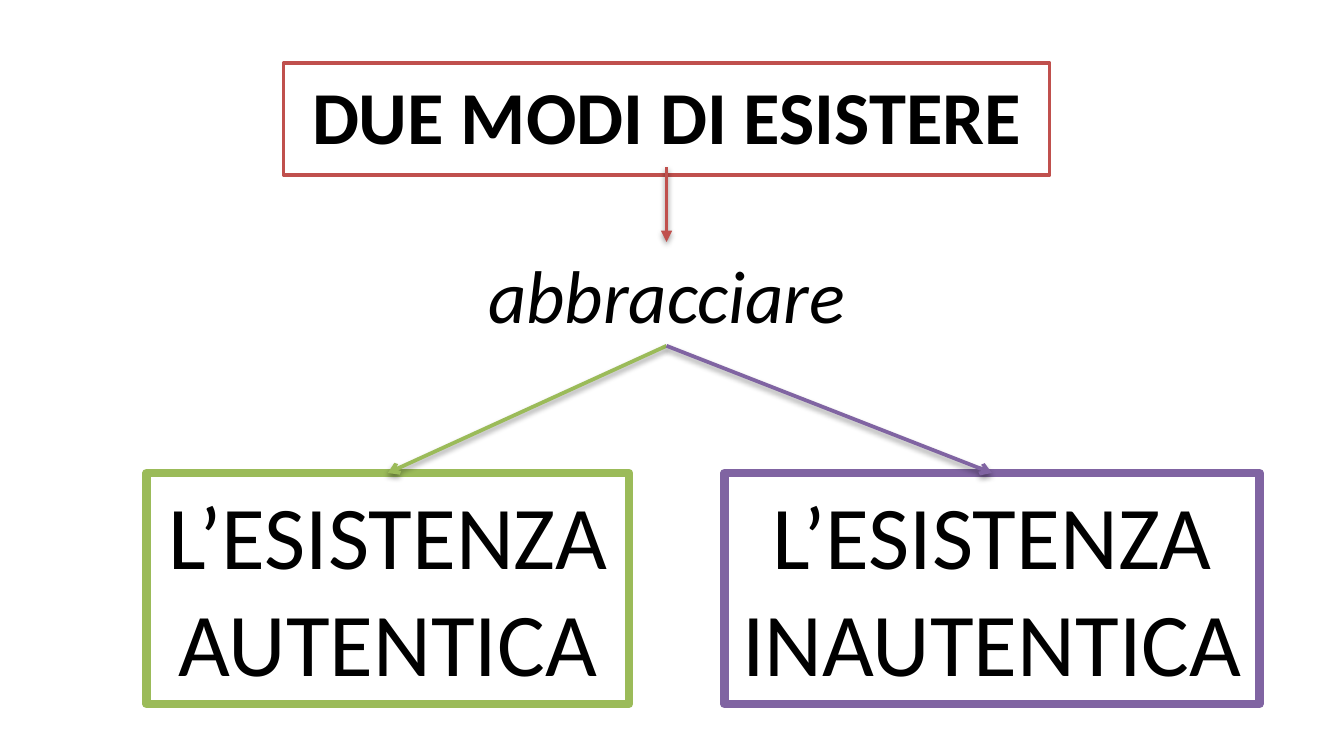
from dataclasses import dataclass

from lxml.etree import SubElement
from pptx import Presentation
from pptx.dml.color import RGBColor
from pptx.enum.shapes import MSO_CONNECTOR, MSO_SHAPE
from pptx.enum.text import MSO_ANCHOR, MSO_AUTO_SIZE, PP_ALIGN
from pptx.oxml.ns import qn
from pptx.util import Pt

BLACK = RGBColor(0x00, 0x00, 0x00)
WHITE = RGBColor(0xFF, 0xFF, 0xFF)
RED = RGBColor(0xC0, 0x50, 0x4D)
GREEN = RGBColor(0x9B, 0xBB, 0x59)
PURPLE = RGBColor(0x80, 0x64, 0xA2)


@dataclass(frozen=True)
class Box:
    text: str
    left: float
    top: float
    width: float
    height: float
    size: float
    bold: bool = False
    italic: bool = False
    color: RGBColor | None = None
    border: float = 0

    @property
    def top_center(self) -> tuple[float, float]:
        return self.left + self.width / 2, self.top

    @property
    def bottom_center(self) -> tuple[float, float]:
        return self.left + self.width / 2, self.top + self.height


TITLE = Box("DUE MODI DI ESISTERE", 151.9, 33.8, 410.4, 55.7, 40,
            bold=True, color=RED, border=2)
VERB = Box("abbracciare", 247.3, 129.6, 219.6, 55.7, 40, italic=True)
AUTHENTIC = Box("L’ESISTENZA AUTENTICA", 78.5, 253.4, 258.5, 123.8, 48,
                color=GREEN, border=4.5)
INAUTHENTIC = Box("L’ESISTENZA INAUTENTICA", 388.1, 253.4, 286.6, 123.8, 48,
                  color=PURPLE, border=4.5)


def format_box(shape, box: Box) -> None:
    """Place the shape and give it its text, fill and border."""
    shape.left, shape.top = Pt(box.left), Pt(box.top)
    shape.width, shape.height = Pt(box.width), Pt(box.height)
    if box.color is not None:
        shape.fill.solid()
        shape.fill.fore_color.rgb = WHITE
        shape.line.color.rgb = box.color
        shape.line.width = Pt(box.border)

    frame = shape.text_frame
    frame.text = box.text
    frame.word_wrap = True
    frame.auto_size = MSO_AUTO_SIZE.SHAPE_TO_FIT_TEXT
    frame.vertical_anchor = MSO_ANCHOR.TOP
    paragraph = frame.paragraphs[0]
    paragraph.alignment = PP_ALIGN.CENTER
    font = paragraph.font
    font.name, font.size = "Calibri", Pt(box.size)
    font.bold, font.italic = box.bold, box.italic
    font.color.rgb = BLACK


def add_arrow(slide, source: Box, target: Box, color: RGBColor, head: str) -> None:
    """Join two boxes with an arrow that casts a soft shadow downwards."""
    start, end = source.bottom_center, target.top_center
    arrow = slide.shapes.add_connector(
        MSO_CONNECTOR.STRAIGHT, *(Pt(value) for value in (*start, *end)))
    arrow.line.color.rgb = color
    arrow.line.width = Pt(2)
    properties = arrow._element.spPr
    SubElement(properties.find(qn("a:ln")), qn("a:tailEnd"), type=head)
    effects = SubElement(properties, qn("a:effectLst"))
    shadow = SubElement(effects, qn("a:outerShdw"), blurRad=str(Pt(3.1)),
                        dist=str(Pt(1.6)), dir="5400000", rotWithShape="0")
    shadow_color = SubElement(shadow, qn("a:srgbClr"), val=str(BLACK))
    SubElement(shadow_color, qn("a:alpha"), val="38000")


def main() -> None:
    presentation = Presentation()
    presentation.slide_width, presentation.slide_height = Pt(720), Pt(405)
    slide = presentation.slides.add_slide(presentation.slide_layouts[5])

    # Title and linking verb
    format_box(slide.shapes.title, TITLE)
    format_box(slide.shapes.add_textbox(0, 0, 0, 0), VERB)

    # The two ways of existing
    for box in (AUTHENTIC, INAUTHENTIC):
        shape = slide.shapes.add_shape(MSO_SHAPE.RECTANGLE, 0, 0, 0, 0)
        shape.shadow.inherit = False
        format_box(shape, box)

    # Arrows
    add_arrow(slide, TITLE, VERB, RED, "triangle")
    add_arrow(slide, VERB, AUTHENTIC, GREEN, "arrow")
    add_arrow(slide, VERB, INAUTHENTIC, PURPLE, "arrow")

    presentation.save("out.pptx")


if __name__ == "__main__":
    main()
